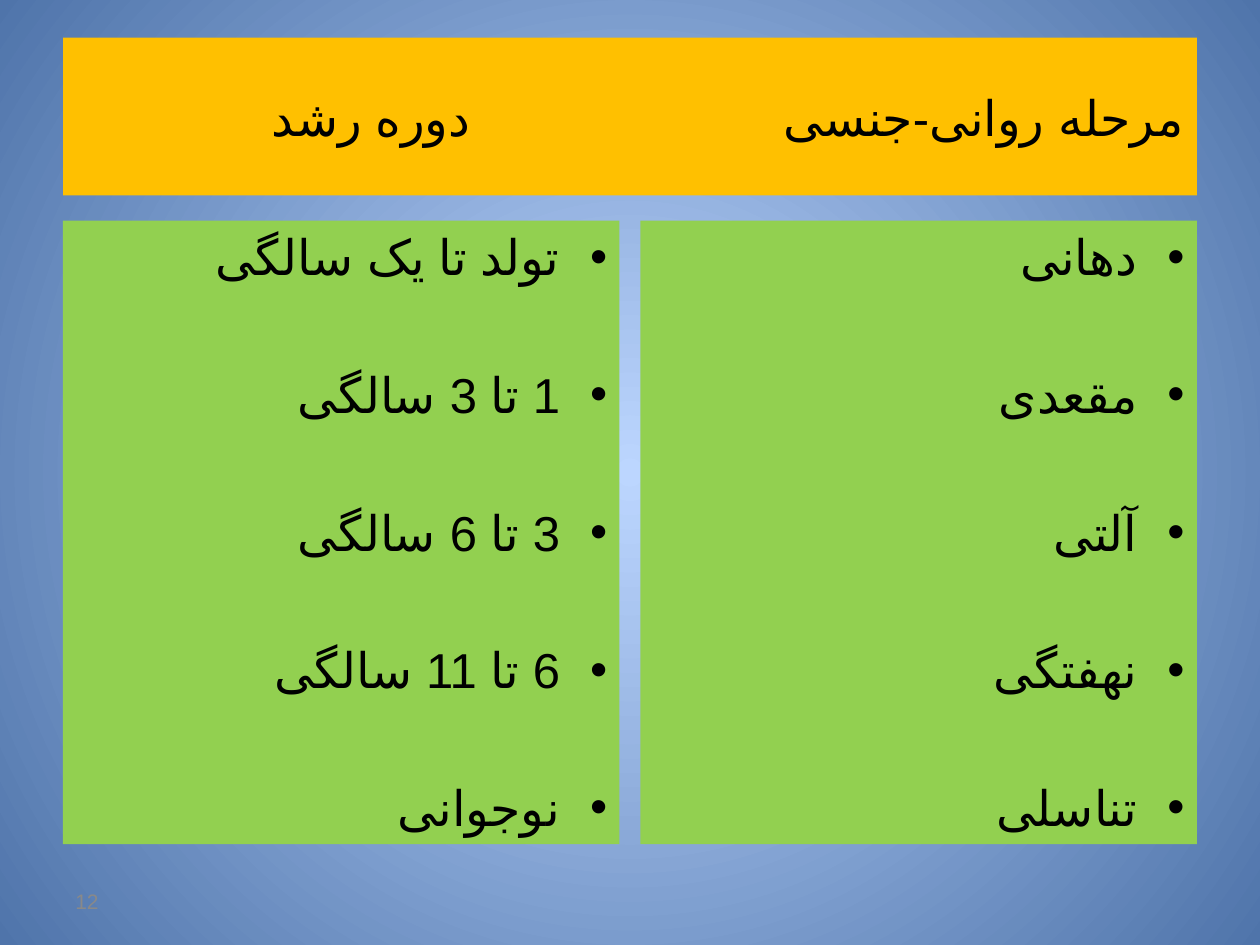
from lxml import etree
from pptx import Presentation
from pptx.dml.color import RGBColor
from pptx.enum.text import MSO_ANCHOR, MSO_AUTO_SIZE, PP_ALIGN
from pptx.oxml.ns import qn
from pptx.util import Cm, Pt

RIGHT, LEFT = PP_ALIGN.RIGHT, PP_ALIGN.LEFT
MIDDLE, TOP = MSO_ANCHOR.MIDDLE, MSO_ANCHOR.TOP
NO_FIT = MSO_AUTO_SIZE.NONE
TITLE_ONLY = 5

# Content
HEADINGS = ["مرحله روانی-جنسی", "دوره رشد"]
AGES = ["تولد تا یک سالگی", "1 تا 3 سالگی", "3 تا 6 سالگی", "6 تا 11 سالگی", "نوجوانی"]
STAGES = ["دهانی", "مقعدی", "آلتی", "نهفتگی", "تناسلی"]
PAGE_NUMBER = "12"

# Layout in centimetres
PAGE_WIDTH, PAGE_HEIGHT = 25.4, 19.05
MARGIN, GUTTER = 1.27, 0.42
COLUMN_WIDTH = (PAGE_WIDTH - 2 * MARGIN - GUTTER) / 2
COLUMN_TOP, COLUMN_HEIGHT = 4.45, 12.57
HEADING_TAB = 18.4  # far end of the second heading, from the right
BULLET_INDENT = 0.95
ITEM_GAP = 45  # points

# Formats
BODY_FONT = {"name": "Calibri", "size": Pt(28)}
NUMBER_FONT = {"name": "Arial", "size": Pt(12)}
PERSIAN_FONT, PERSIAN = "Arial", "fa-IR"


def color(hex_text):
    return RGBColor.from_string(hex_text)


def place(box, left, top, width, height):
    box.left, box.top, box.width, box.height = map(Cm, (left, top, width, height))


def prepare(box, fill, anchor):
    if fill:
        box.fill.solid()
        box.fill.fore_color.rgb = color(fill)
    frame = box.text_frame
    settings = {"word_wrap": True, "auto_size": NO_FIT, "vertical_anchor": anchor}
    for name, value in settings.items():
        setattr(frame, name, value)
    return frame


def write(para, text, font, ink="000000", align=RIGHT):
    para.alignment = align
    span = para.add_run()
    span.text = text
    for name, value in font.items():
        setattr(span.font, name, value)
    span.font.color.rgb = color(ink)
    return span


def write_persian(para, text):
    """Write right-to-left text and return the paragraph properties."""
    span = write(para, text, BODY_FONT)
    letters = span._r.get_or_add_rPr()
    letters.set("lang", PERSIAN)
    etree.SubElement(letters, qn("a:cs"), typeface=PERSIAN_FONT)
    properties = para._p.get_or_add_pPr()
    properties.set("rtl", "1")
    return properties


def add_bullet(properties):
    properties.set("marL", str(Cm(BULLET_INDENT)))
    properties.set("indent", str(-Cm(BULLET_INDENT)))
    etree.SubElement(properties, qn("a:buFont"), typeface="Arial")
    etree.SubElement(properties, qn("a:buChar"), char="•")


def paint_background(page):
    fill = page.background.fill
    fill.gradient()
    for stop, position, hex_text in zip(fill.gradient_stops, (0, 1), ("BCD6FF", "4F74AA")):
        stop.position = position
        stop.color.rgb = color(hex_text)
    # Swap the linear direction for a circle around the centre
    linear = page.element.find(".//" + qn("a:lin"))
    circle = etree.Element(qn("a:path"), path="circle")
    etree.SubElement(circle, qn("a:fillToRect"), l="50000", t="50000", r="50000", b="50000")
    linear.getparent().replace(linear, circle)


def add_title(page):
    title = page.shapes.title
    place(title, MARGIN, 0.76, PAGE_WIDTH - 2 * MARGIN, 3.18)
    para = prepare(title, "FFC000", MIDDLE).paragraphs[0]
    properties = write_persian(para, "\t".join(HEADINGS))
    tabs = etree.SubElement(properties, qn("a:tabLst"))
    etree.SubElement(tabs, qn("a:tab"), pos=str(Cm(HEADING_TAB)), algn="l")


def add_column(page, index, items):
    left = MARGIN + index * (COLUMN_WIDTH + GUTTER)
    box = page.shapes.add_textbox(0, 0, 0, 0)
    place(box, left, COLUMN_TOP, COLUMN_WIDTH, COLUMN_HEIGHT)
    frame = prepare(box, "92D050", TOP)
    for row, item in enumerate(items):
        para = frame.add_paragraph() if row else frame.paragraphs[0]
        para.space_before = Pt(ITEM_GAP if row else 0)
        add_bullet(write_persian(para, item))


def add_page_number(page):
    box = page.shapes.add_textbox(0, 0, 0, 0)
    place(box, MARGIN, 17.66, 5.93, 1.01)
    para = prepare(box, None, MIDDLE).paragraphs[0]
    write(para, PAGE_NUMBER, NUMBER_FONT, "898989", LEFT)


def main():
    deck = Presentation()
    deck.slide_width, deck.slide_height = Cm(PAGE_WIDTH), Cm(PAGE_HEIGHT)
    page = deck.slides.add_slide(deck.slide_layouts[TITLE_ONLY])
    paint_background(page)
    add_title(page)
    for index, items in enumerate((AGES, STAGES)):
        add_column(page, index, items)
    add_page_number(page)
    deck.save("out.pptx")


if __name__ == "__main__":
    main()
